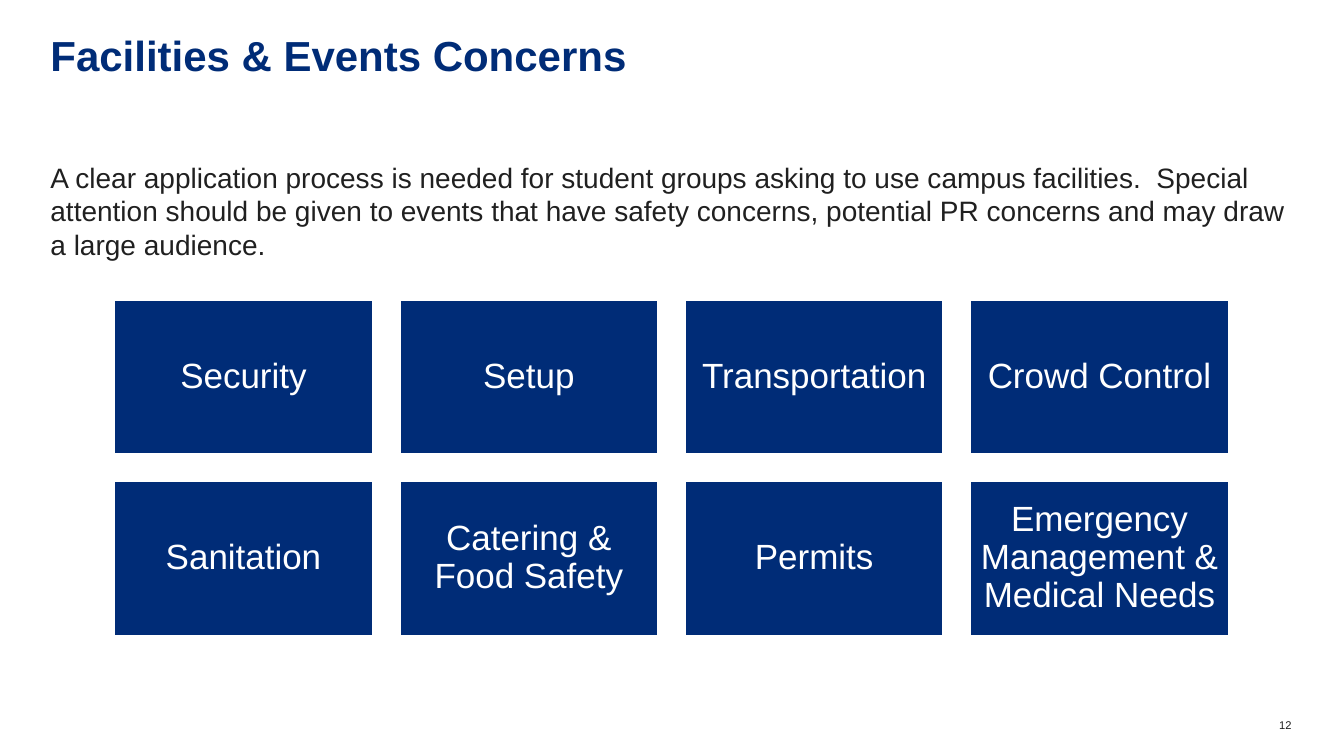
from dataclasses import dataclass

import pptx
import pptx.dml.color
import pptx.enum.shapes
import pptx.enum.text
import pptx.oxml
import pptx.util
from pptx.enum.text import MSO_ANCHOR, PP_ALIGN
from pptx.util import Inches

NAVY, INK, WHITE = "002C77", "202020", "FFFFFF"
COLUMNS = 4
CARD_LEFT, CARD_TOP = 1.13, 2.97
CARD_WIDTH, CARD_HEIGHT = 2.57, 1.54
COLUMN_STEP, ROW_STEP = 2.83, 1.8
CONCERNS = [
    "Security", "Setup", "Transportation", "Crowd Control",
    "Sanitation", "Catering & Food Safety", "Permits",
    "Emergency Management & Medical Needs",
]


@dataclass
class TextStyle:
    size: float
    color: str
    align: PP_ALIGN = PP_ALIGN.LEFT
    anchor: MSO_ANCHOR = MSO_ANCHOR.TOP
    bold: bool = False
    line_spacing: float = 1.0
    margin: float = 0


TITLE = TextStyle(30, NAVY, bold=True, line_spacing=0.8)
BODY = TextStyle(20, INK)
CARD = TextStyle(25, WHITE, PP_ALIGN.CENTER, MSO_ANCHOR.MIDDLE,
                 line_spacing=0.9, margin=0.1)
PAGE_NUMBER = TextStyle(8, INK, PP_ALIGN.RIGHT)


def rgb(color: str) -> pptx.dml.color.RGBColor:
    return pptx.dml.color.RGBColor.from_string(color)


def place(shape, left: float, top: float, width: float, height: float) -> None:
    shape.left, shape.top = Inches(left), Inches(top)
    shape.width, shape.height = Inches(width), Inches(height)


def write(shape, text: str, style: TextStyle) -> None:
    frame = shape.text_frame
    frame.text = text
    frame.word_wrap = True
    frame.auto_size = pptx.enum.text.MSO_AUTO_SIZE.NONE
    frame.vertical_anchor = style.anchor
    frame.margin_left = frame.margin_right = Inches(style.margin)
    frame.margin_top = frame.margin_bottom = Inches(style.margin)
    paragraph = frame.paragraphs[0]
    paragraph.alignment = style.align
    paragraph.line_spacing = style.line_spacing
    paragraph.space_before = pptx.util.Pt(0)
    font = paragraph.runs[0].font
    font.name = "Arial"
    font.size = pptx.util.Pt(style.size)
    font.bold = style.bold
    font.color.rgb = rgb(style.color)


def remove_bullet(paragraph) -> None:
    properties = paragraph._p.get_or_add_pPr()
    properties.set("marL", "0")
    properties.set("indent", "0")
    pptx.oxml.ns.qn("a:buNone")
    properties.append(properties.makeelement(pptx.oxml.ns.qn("a:buNone"), {}))


def add_card(slide, index: int, label: str) -> None:
    row, column = divmod(index, COLUMNS)
    card = slide.shapes.add_shape(
        pptx.enum.shapes.MSO_SHAPE.RECTANGLE,
        Inches(CARD_LEFT + column * COLUMN_STEP),
        Inches(CARD_TOP + row * ROW_STEP),
        Inches(CARD_WIDTH), Inches(CARD_HEIGHT))
    card.shadow.inherit = False
    card.fill.solid()
    card.fill.fore_color.rgb = rgb(NAVY)
    card.line.color.rgb = rgb(WHITE)
    card.line.width = pptx.util.Pt(2)
    write(card, label, CARD)


def main() -> None:
    presentation = pptx.Presentation()
    presentation.slide_width = Inches(13.33)
    presentation.slide_height = Inches(7.5)
    slide = presentation.slides.add_slide(presentation.slide_layouts[1])

    title, body = slide.placeholders
    place(title, 0.5, 0.39, 12.31, 0.54)
    write(title, "Facilities & Events Concerns", TITLE)

    place(body, 0.5, 1.59, 12.27, 5.29)
    write(body, "A clear application process is needed for student groups "
                "asking to use campus facilities.  Special attention should "
                "be given to events that have safety concerns, potential PR "
                "concerns and may draw a large audience.", BODY)
    remove_bullet(body.text_frame.paragraphs[0])

    for index, label in enumerate(CONCERNS):
        add_card(slide, index, label)

    page_number = slide.shapes.add_textbox(
        Inches(12.5), Inches(7.13), Inches(0.31), Inches(0.13))
    write(page_number, "12", PAGE_NUMBER)

    presentation.save("out.pptx")


if __name__ == "__main__":
    main()
